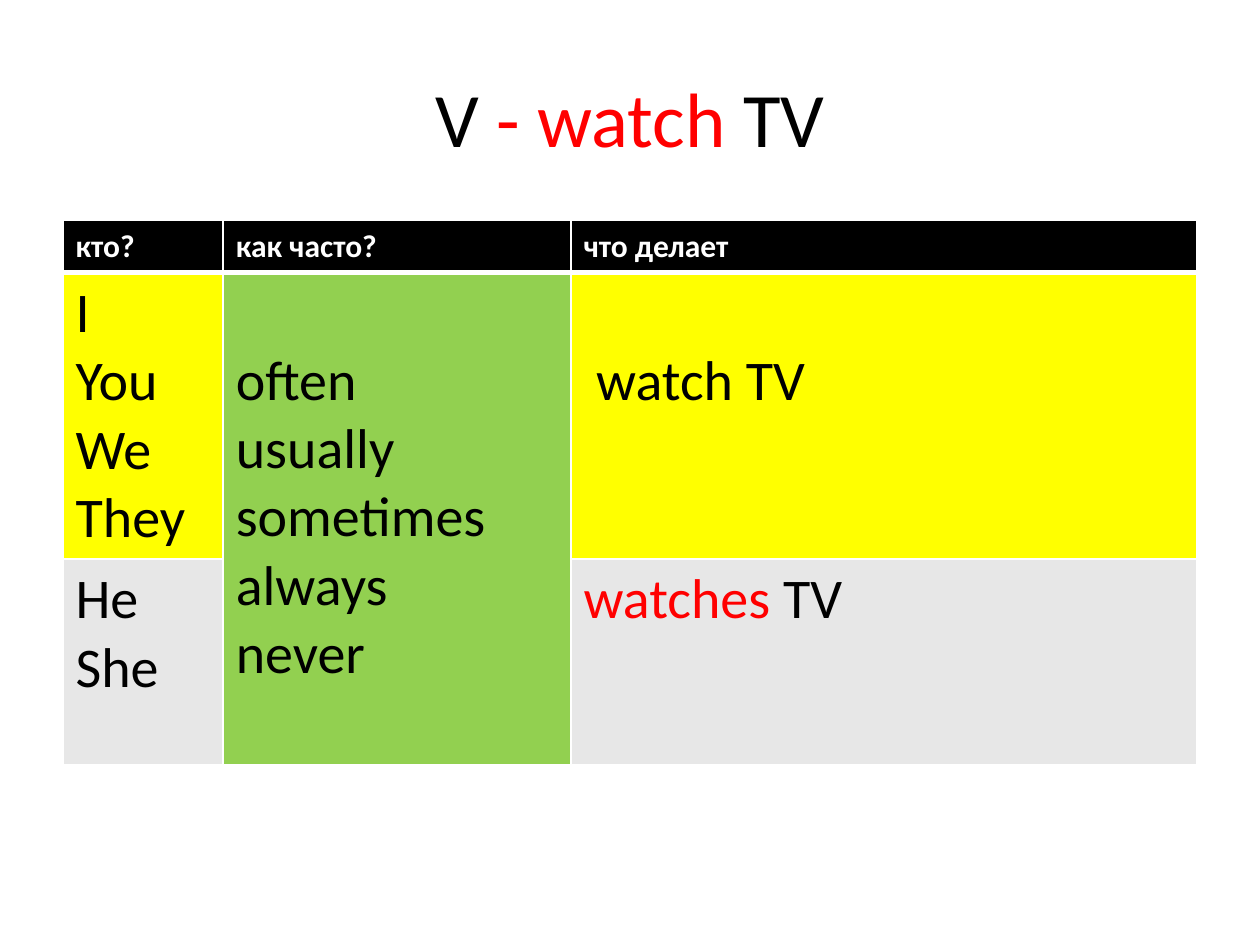
from dataclasses import dataclass

from lxml import etree
from pptx import Presentation
from pptx.dml.color import RGBColor
from pptx.enum.text import MSO_ANCHOR, PP_ALIGN
from pptx.oxml.ns import qn
from pptx.util import Cm, Pt

MIDDLE, TOP = MSO_ANCHOR.MIDDLE, MSO_ANCHOR.TOP
CENTER = PP_ALIGN.CENTER


@dataclass(frozen=True)
class Theme:
    font: str = "Calibri"
    black: str = "000000"
    white: str = "FFFFFF"
    red: str = "FF0000"
    yellow: str = "FFFF00"
    green: str = "92D050"
    grey: str = "E7E7E7"
    title: int = 44
    head: int = 18
    body: int = 32
    thin: int = 1
    thick: int = 3


THEME = Theme()


@dataclass(frozen=True)
class Run:
    text: str
    color: str = THEME.black


@dataclass(frozen=True)
class Entry:
    row: int
    col: int
    lines: list[list[Run]]
    fill: str
    size: int = THEME.body
    bold: bool = False
    top: float = 0.13


WIDTHS = (3.23, 7.01, 12.62)
HEIGHTS = (1.04, 5.77, 4.14)
DROP = 1.5  # top margin that starts the text on the second line


def plain(*words: str) -> list[list[Run]]:
    return [[Run(word)] for word in words]


HEADS = [
    Entry(0, col, [[Run(text, THEME.white)]], THEME.black, THEME.head, True)
    for col, text in enumerate(("кто?", "как часто?", "что делает"))
]
BODY = [
    Entry(1, 0, plain("I", "You", "We", "They"), THEME.yellow),
    Entry(1, 1, plain("often", "usually", "sometimes", "always", "never"),
          THEME.green, top=DROP),
    Entry(1, 2, plain(" watch TV"), THEME.yellow, top=DROP),
    Entry(2, 0, plain("He", "She"), THEME.grey),
    Entry(2, 2, [[Run("watches ", THEME.red), Run("TV")]], THEME.grey),
]
TITLE = [[Run("V"), Run(" - watch ", THEME.red), Run("TV")]]


def write(frame, lines: list[list[Run]], size: int, bold: bool = False, align=None) -> None:
    for i, line in enumerate(lines):
        para = frame.paragraphs[0] if i == 0 else frame.add_paragraph()
        para.alignment = align
        for part in line:
            run = para.add_run()
            run.text = part.text
            run.font.name = THEME.font
            run.font.size = Pt(size)
            run.font.bold = bold
            run.font.color.rgb = RGBColor.from_string(part.color)


def border(cell, row: int) -> None:
    """Draw white edges, thick between the header and the body."""
    thick = {0: "lnB", 1: "lnT"}.get(row)
    props = cell._tc.get_or_add_tcPr()
    for side in ("lnL", "lnR", "lnT", "lnB"):
        width = THEME.thick if side == thick else THEME.thin
        line = etree.SubElement(props, qn(f"a:{side}"), w=str(Pt(width)))
        fill = etree.SubElement(line, qn("a:solidFill"))
        etree.SubElement(fill, qn("a:srgbClr"), val=THEME.white)


def put(table, entry: Entry) -> None:
    cell = table.cell(entry.row, entry.col)
    cell.fill.solid()
    cell.fill.fore_color.rgb = RGBColor.from_string(entry.fill)
    cell.vertical_anchor = TOP
    cell.margin_top = Cm(entry.top)
    write(cell.text_frame, entry.lines, entry.size, entry.bold)


def grid(slide) -> None:
    table = slide.shapes.add_table(
        len(HEIGHTS), len(WIDTHS), Cm(1.27), Cm(4.45),
        Cm(sum(WIDTHS)), Cm(sum(HEIGHTS))).table
    for col, width in zip(table.columns, WIDTHS):
        col.width = Cm(width)
    for i, height in enumerate(HEIGHTS):
        table.rows[i].height = Cm(height)
        for cell in table.rows[i].cells:
            border(cell, i)
    table.cell(1, 1).merge(table.cell(2, 1))
    for entry in HEADS + BODY:
        put(table, entry)


def main() -> None:
    deck = Presentation()
    deck.slide_width, deck.slide_height = Cm(25.4), Cm(19.05)
    slide = deck.slides.add_slide(deck.slide_layouts[5])
    title = slide.shapes.title
    title.left, title.top = Cm(1.27), Cm(0.76)
    title.width, title.height = Cm(22.86), Cm(3.18)
    title.text_frame.vertical_anchor = MIDDLE
    write(title.text_frame, TITLE, THEME.title, align=CENTER)
    grid(slide)
    deck.save("out.pptx")


if __name__ == "__main__":
    main()
